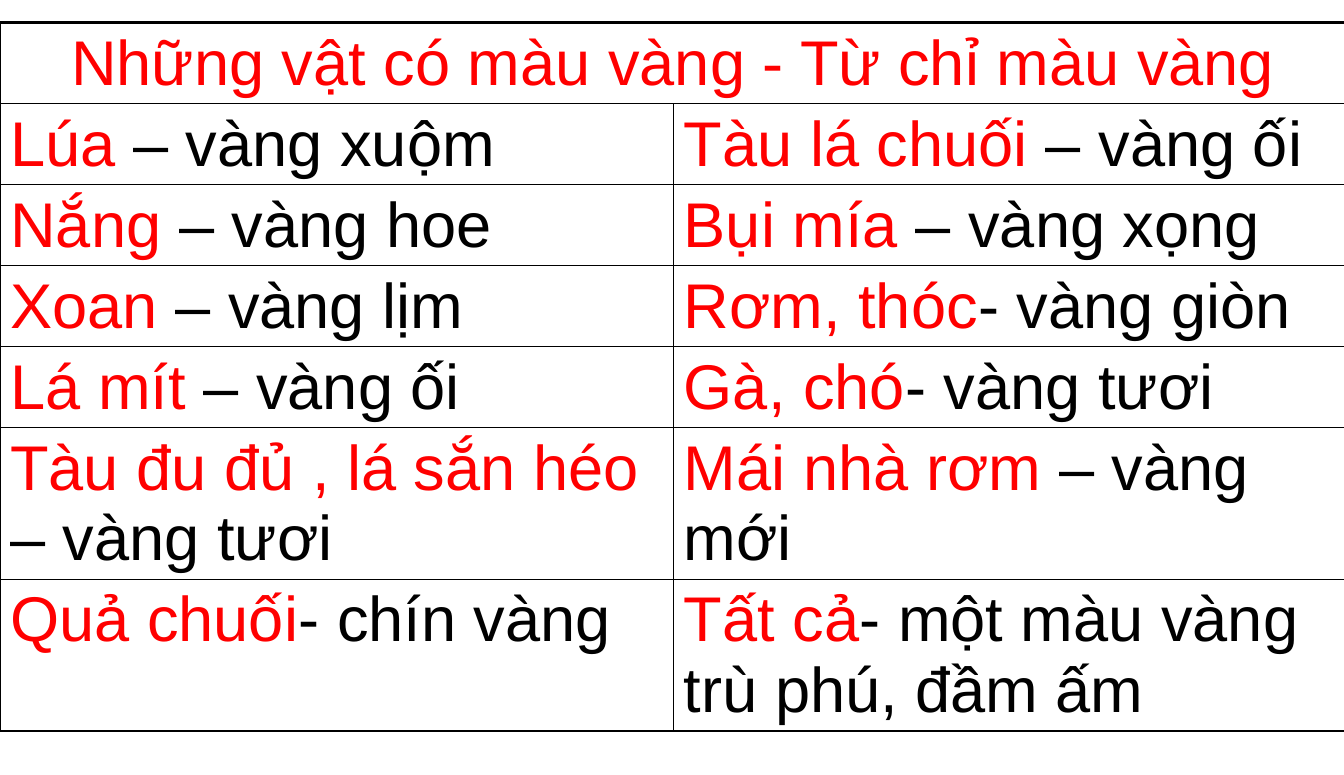
from lxml import etree
from pptx import Presentation
from pptx import util as u
from pptx.dml.color import RGBColor
from pptx.enum import text
from pptx.oxml.ns import qn

COLORS = {"thing": "FF0000", "shade": "000000", "border": "000000"}
FONT = {"name": "Arial", "size": u.Pt(44)}
TITLE = "Những vật có màu vàng - Từ chỉ màu vàng"
PAIRS = [
    [("Lúa", " – vàng xuộm"), ("Tàu lá chuối", " – vàng ối")],
    [("Nắng", " – vàng hoe"), ("Bụi mía", " – vàng xọng")],
    [("Xoan", " – vàng lịm"), ("Rơm, thóc", "- vàng giòn")],
    [("Lá mít", " – vàng ối"), ("Gà, chó", "- vàng tươi")],
    [("Tàu đu đủ , lá sắn héo", " – vàng tươi"), ("Mái nhà rơm", " – vàng mới")],
    [("Quả chuối", "- chín vàng"), ("Tất cả", "- một màu vàng trù phú, đầm ấm")],
]
ROW_HEIGHTS = [0.62] + [0.73] * 4 + [1.15] * 2
THIN, THICK = 1, 2.25


def add_run(p, words, color):
    """Append a run in the table font."""
    r = p.add_run()
    r.text = words
    for name, value in FONT.items():
        setattr(r.font, name, value)
    r.font.color.rgb = RGBColor.from_string(COLORS[color])


def set_borders(cell, widths):
    """Draw left, right, top and bottom borders with widths in points."""
    tc_pr = cell._tc.get_or_add_tcPr()
    for i, (side, width) in enumerate(zip("LRTB", widths)):
        ln = etree.Element(qn(f"a:ln{side}"), w=str(u.Pt(width)))
        fill = etree.SubElement(ln, qn("a:solidFill"))
        etree.SubElement(fill, qn("a:srgbClr"), val=COLORS["border"])
        tc_pr.insert(i, ln)


def add_word_table(s, left, top, width):
    """Place the heading row and the pairs of things and shades."""
    rows, cols = len(ROW_HEIGHTS), len(PAIRS[0])
    height = u.Inches(sum(ROW_HEIGHTS))
    table = s.shapes.add_table(rows, cols, left, top, width, height).table
    table.first_row = table.horz_banding = False
    for row, h in zip(table.rows, ROW_HEIGHTS):
        row.height = u.Inches(h)
    table.cell(0, 0).merge(table.cell(0, cols - 1))
    for i in range(rows):
        for j in range(cols):
            cell = table.cell(i, j)
            cell.fill.background()
            last_col = j == cols - 1 or i == 0
            edges = (j == 0, last_col, i == 0, i == rows - 1)
            set_borders(cell, [THICK if edge else THIN for edge in edges])
            if cell.is_spanned:
                continue
            p = cell.text_frame.paragraphs[0]
            if i == 0:
                p.alignment = text.PP_ALIGN.CENTER
                add_run(p, TITLE, "thing")
            else:
                for words, color in zip(PAIRS[i - 1][j], ("thing", "shade")):
                    add_run(p, words, color)


def main():
    """Build and save the slide."""
    prs = Presentation()
    prs.slide_width, prs.slide_height = u.Inches(13), u.Inches(7.5)
    s = prs.slides.add_slide(prs.slide_layouts[6])
    add_word_table(s, u.Inches(0), u.Inches(0.22), u.Inches(13.03))
    prs.save("out.pptx")


if __name__ == "__main__":
    main()
